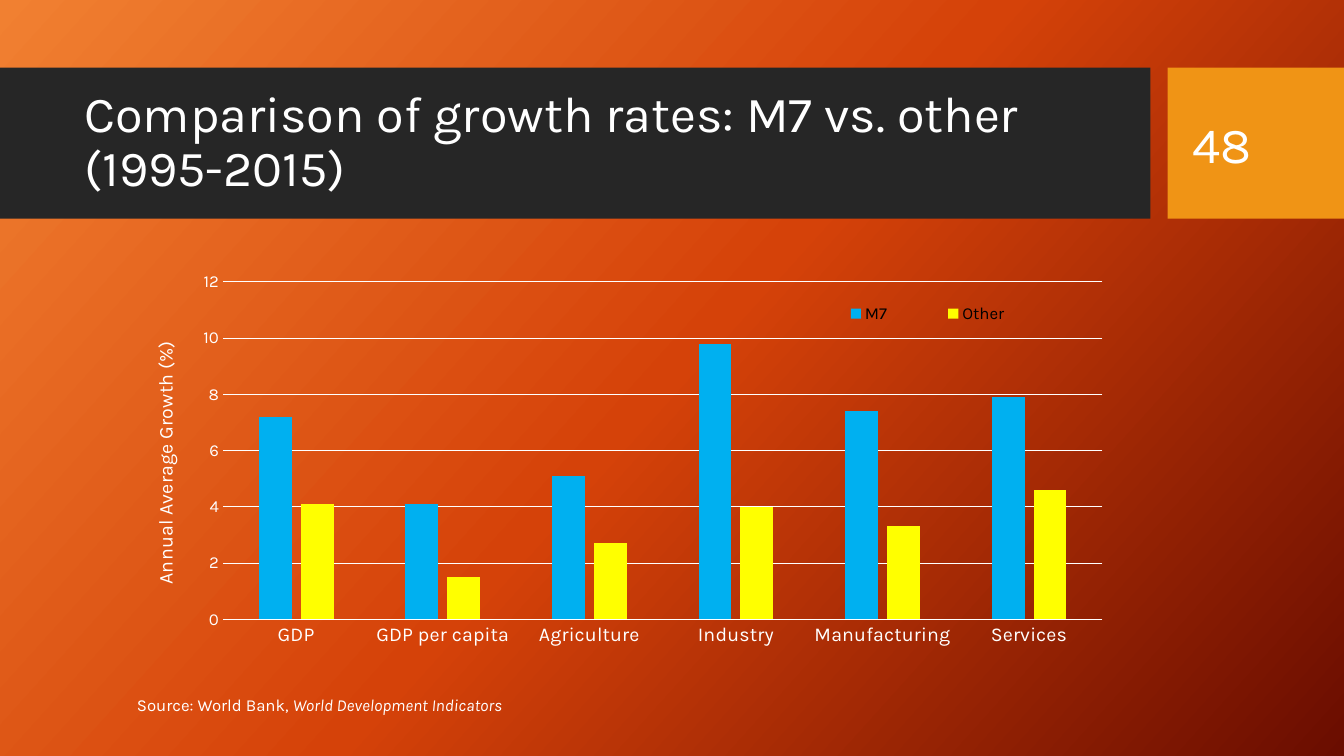
import copy

import pptx
import pptx.chart.data
import pptx.dml.color
import pptx.enum.chart
import pptx.enum.shapes
import pptx.enum.text
import pptx.oxml
import pptx.oxml.ns
import pptx.util

WIDE, HIGH = 13.33, 7.5
FONT = "Karla"
WHITE = "FFFFFF"
BAND = (0.67, 1.5)  # top and height of the header
qn = pptx.oxml.ns.qn


def tint(code):
    return pptx.dml.color.RGBColor.from_string(code)


def inches(box):
    return [pptx.util.Inches(n) for n in box]


def style(font, size, color=WHITE):
    font.name = FONT
    font.size = pptx.util.Pt(size)
    font.color.rgb = tint(color)


def paint(slide, stops, angle):
    """Fill the background with a gradient; the angle runs clockwise."""
    fill = slide.background.fill
    fill.gradient()
    fill.gradient_angle = 360 - angle
    first = next(slide.element.iter(qn("a:gs")))
    for _ in stops[2:]:
        first.addnext(copy.deepcopy(first))
    for stop, (place, color) in zip(fill.gradient_stops, stops):
        stop.position = place
        stop.color.rgb = tint(color)


def block(slide, box, color):
    shape = slide.shapes.add_shape(
        pptx.enum.shapes.MSO_SHAPE.RECTANGLE, *inches(box))
    shape.shadow.inherit = False
    shape.fill.solid()
    shape.fill.fore_color.rgb = tint(color)
    shape.line.fill.background()


def label(slide, box, parts, size, middle=False):
    """Write (text, italic) parts as one paragraph."""
    frame = slide.shapes.add_textbox(*inches(box)).text_frame
    frame.word_wrap = True
    if middle:
        frame.vertical_anchor = pptx.enum.text.MSO_ANCHOR.MIDDLE
    line = frame.paragraphs[0]
    for text, italic in parts:
        run = line.add_run()
        run.text = text
        style(run.font, size)
        run.font.italic = italic
    return line


def header(slide, title, number):
    top, high = BAND
    split, gap, pad = 11.41, 0.17, 0.15
    right = split + gap
    block(slide, (0, top, split, high), "262626")
    block(slide, (right, top, WIDE - right, high), "F09415")
    inner = high - 2 * pad
    line = label(slide, (0.74, top + pad, 10.51, inner),
                 [(title, False)], 36, True)
    line.line_spacing = 0.9
    label(slide, (right + pad, top + pad, 1.26, inner),
          [(number, False)], 36, True)


def place(node, index, spot, inner=False):
    """Set a chart part's layout as shares of the chart: x, y, w, h."""
    for old in node.findall(qn("c:layout")):
        node.remove(old)
    tags = [("layoutTarget", "inner")] if inner else []
    tags += [("xMode", "edge"), ("yMode", "edge")]
    tags += zip("xywh", spot)
    body = "".join(f'<c:{tag} val="{val}"/>' for tag, val in tags)
    space = pptx.oxml.ns.nsdecls("c")
    node.insert(index, pptx.oxml.parse_xml(
        f"<c:layout {space}><c:manualLayout>{body}"
        "</c:manualLayout></c:layout>"))


def rule(line):
    line.color.rgb = tint(WHITE)
    line.width = pptx.util.Pt(0.75)


def axes(chart, title):
    none = pptx.enum.chart.XL_TICK_MARK.NONE
    for axis, size in ((chart.category_axis, 14), (chart.value_axis, 12)):
        axis.major_tick_mark = axis.minor_tick_mark = none
        style(axis.tick_labels.font, size)
    rule(chart.category_axis.format.line)
    scale = chart.value_axis
    scale.minimum_scale, scale.maximum_scale, scale.major_unit = 0, 12, 2
    scale.format.line.fill.background()
    rule(scale.major_gridlines.format.line)
    frame = scale.axis_title.text_frame
    frame.text = title
    font = frame.paragraphs[0].runs[0].font
    style(font, 14)
    font.bold = False
    node = chart.element.find(".//" + qn("c:valAx") + "/" + qn("c:title"))
    body = node.find(".//" + qn("a:bodyPr"))
    body.set("rot", "-5400000")
    body.set("vert", "horz")
    place(node, 1, (0.07, 0.2))


def columns(slide, box, cats, series, title):
    data = pptx.chart.data.CategoryChartData()
    data.categories = cats
    for name, vals, _ in series:
        data.add_series(name, vals)
    kind = pptx.enum.chart.XL_CHART_TYPE.COLUMN_CLUSTERED
    chart = slide.shapes.add_chart(kind, *inches(box), data).chart
    chart.has_title = False
    style(chart.font, 10)
    plot = chart.plots[0]
    plot.gap_width, plot.overlap = 219, -27
    plot.vary_by_categories = False
    for bar, (_, _, color) in zip(plot.series, series):
        bar.format.fill.solid()
        bar.format.fill.fore_color.rgb = tint(color)
    axes(chart, title)
    chart.has_legend = True
    legend = chart.legend
    legend.position = pptx.enum.chart.XL_LEGEND_POSITION.BOTTOM
    legend.include_in_layout = False
    style(legend.font, 12, "000000")
    root = chart.element
    place(root.find(".//" + qn("c:legend")), 1, (0.68, 0.1, 0.25, 0.08))
    place(root.find(".//" + qn("c:plotArea")), 0,
          (0.14, 0.06, 0.83, 0.85), True)


def main():
    deck = pptx.Presentation()
    deck.slide_width, deck.slide_height = inches((WIDE, HIGH))
    slide = deck.slides.add_slide(deck.slide_layouts[6])
    paint(slide, [(0, "F18031"), (0.5, "D54209"), (1, "6A0D00")], 42)
    header(slide, "Comparison of growth rates: M7 vs. other (1995-2015)", "48")
    columns(slide, (0.74, 2.56, 10.51, 3.94),
            ["GDP", "GDP per capita", "Agriculture", "Industry",
             "Manufacturing", "Services"],
            [("M7", (7.2, 4.1, 5.1, 9.8, 7.4, 7.9), "00B0F0"),
             ("Other", (4.1, 1.5, 2.7, 4, 3.3, 4.6), "FFFF00")],
            "Annual Average Growth (%)")
    label(slide, (1.26, 6.84, 10.13, 0.3),
          [("Source: World Bank, ", False),
           ("World Development Indicators", True)], 12)
    deck.save("out.pptx")


if __name__ == "__main__":
    main()
